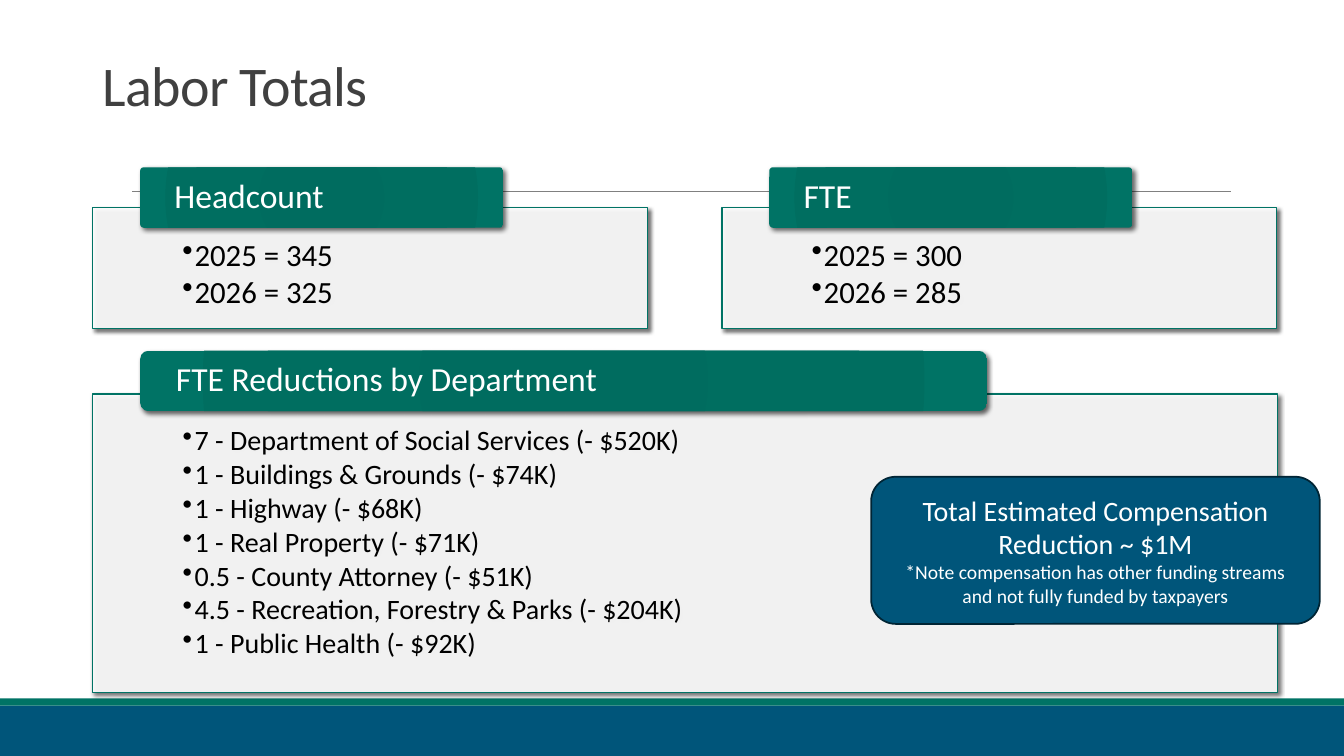
from lxml import etree
from pptx import Presentation
from pptx.dml.color import RGBColor
from pptx.enum.shapes import MSO_CONNECTOR, MSO_SHAPE
from pptx.enum.text import MSO_ANCHOR, MSO_AUTO_SIZE, PP_ALIGN
from pptx.oxml import parse_xml
from pptx.oxml.ns import qn
from pptx.util import Inches, Pt

RECTANGLE = MSO_SHAPE.RECTANGLE
ROUNDED = MSO_SHAPE.ROUNDED_RECTANGLE
MIDDLE = MSO_ANCHOR.MIDDLE
TOP = MSO_ANCHOR.TOP
LEFT = PP_ALIGN.LEFT
CENTER = PP_ALIGN.CENTER

NAVY, GREEN, WHITE = "00557A", "007365", "FFFFFF"
NAMESPACE = 'xmlns:a="http://schemas.openxmlformats.org/drawingml/2006/main"'
GRADIENT_STOPS = [(0, "006B5E"), (34, "006C5F"), (70, "006E60"), (100, GREEN)]
PANEL_LEFT, TAB_OFFSET = 0.92, 0.47

# left, panel top, panel width, panel height, tab top, tab width, heading, size, items
SECTIONS = [
    (PANEL_LEFT, 2.06, 5.5, 1.2, 1.66, 3.6, "Headcount", 22,
     ["2025 = 345", "2026 = 325"]),
    (7.16, 2.06, 5.5, 1.2, 1.66, 3.6, "FTE", 22,
     ["2025 = 300", "2026 = 285"]),
    (PANEL_LEFT, 3.91, 11.75, 2.96, 3.48, 8.4, "FTE Reductions by Department", 20,
     ["7 - Department of Social Services (- $520K)",
      "1 - Buildings & Grounds (- $74K)",
      "1 - Highway (- $68K)",
      "1 - Real Property (- $71K)",
      "0.5 - County Attorney (- $51K)",
      "4.5 - Recreation, Forestry & Parks (- $204K)",
      "1 - Public Health (- $92K)"]),
]


def color(hex_string):
    return RGBColor.from_string(hex_string)


def add_box(kind, left, top, width, height, fill, line=None, line_width=1, shadow_blur=0):
    """Add a filled shape with optional outline and a soft shadow, blur in points."""
    shape = slide.shapes.add_shape(
        kind, Inches(left), Inches(top), Inches(width), Inches(height))
    shape.shadow.inherit = False
    shape.fill.solid()
    shape.fill.fore_color.rgb = color(fill)
    if line:
        shape.line.color.rgb = color(line)
        shape.line.width = Pt(line_width)
    else:
        shape.line.fill.background()
    if shadow_blur:
        effects = shape.element.spPr.find(qn("a:effectLst"))
        effects.append(parse_xml(
            f'<a:outerShdw {NAMESPACE} blurRad="{Pt(shadow_blur)}" dist="{Pt(2)}" '
            'dir="2700000" algn="tl" rotWithShape="0"><a:srgbClr val="000000">'
            '<a:alpha val="60000"/></a:srgbClr></a:outerShdw>'))
    return shape


presentation = Presentation()
presentation.slide_width = Inches(13.33)
presentation.slide_height = Inches(7.5)
slide = presentation.slides.add_slide(presentation.slide_layouts[5])

# Footer bands and rule
add_box(RECTANGLE, 0, 7, 13.33, 0.5, NAVY)
add_box(RECTANGLE, 0, 6.93, 13.33, 0.07, GREEN)
rule = slide.shapes.add_connector(
    MSO_CONNECTOR.STRAIGHT, Inches(1.31), Inches(1.9), Inches(12.21), Inches(1.9))
rule.line.color.rgb = color("808080")
rule.line.width = Pt(0.5)
etree.SubElement(rule.element.spPr, qn("a:effectLst"))

# Title
title = slide.shapes.title
title.left, title.top = Inches(PANEL_LEFT), Inches(0.51)
title.width, title.height = Inches(11.5), Inches(0.75)
title.text_frame.text = "Labor Totals"
title.text_frame.auto_size = MSO_AUTO_SIZE.NONE
title.text_frame.vertical_anchor = MIDDLE
paragraph = title.text_frame.paragraphs[0]
paragraph.alignment = LEFT
paragraph.line_spacing = 0.85
run = paragraph.runs[0]
run.font.name = "Calibri"
run.font.size = Pt(40)
run.font.color.rgb = color("404040")
run.font._element.set("spc", "-50")

# Panels with heading tabs
for left, top, width, height, tab_top, tab_width, heading, size, items in SECTIONS:
    panel = add_box(RECTANGLE, left, top, width, height, WHITE, GREEN, shadow_blur=3)
    panel_color = panel.element.spPr.find(qn("a:solidFill"))[0]
    etree.SubElement(panel_color, qn("a:alpha")).set("val", "90000")
    frame = panel.text_frame
    frame.vertical_anchor = TOP
    frame.margin_left = frame.margin_right = Inches(0.89)
    frame.margin_top, frame.margin_bottom = Inches(0.32), Inches(0.11)
    frame.text = "\n".join(items)
    for paragraph in frame.paragraphs:
        properties = paragraph._p.get_or_add_pPr()
        properties.set("marL", str(Inches(0.12)))
        properties.set("indent", str(Inches(-0.12)))
        etree.SubElement(properties, qn("a:buChar")).set("char", "•")
        paragraph.level = 1
        paragraph.alignment = LEFT
        paragraph.line_spacing = 0.9
        paragraph.space_after = Pt(2.6)
        paragraph.font.name = "Calibri"
        paragraph.font.size = Pt(size)
        paragraph.font.color.rgb = color("000000")

    tab = add_box(ROUNDED, left + TAB_OFFSET, tab_top, tab_width, 0.6, GREEN,
                  shadow_blur=3.5)
    tab.adjustments[0] = tab_width / 60
    stops = "".join(f'<a:gs pos="{position * 1000}"><a:srgbClr val="{shade}"/></a:gs>'
                    for position, shade in GRADIENT_STOPS)
    tab_properties = tab.element.spPr
    tab_properties.replace(tab_properties.find(qn("a:solidFill")), parse_xml(
        f'<a:gradFill {NAMESPACE} rotWithShape="1"><a:gsLst>{stops}</a:gsLst>'
        '<a:path path="circle"><a:fillToRect l="100000" t="100000" r="100000" '
        'b="100000"/></a:path></a:gradFill>'))
    frame = tab.text_frame
    frame.vertical_anchor = MIDDLE
    frame.margin_left = frame.margin_right = Inches(0.33)
    frame.margin_top = frame.margin_bottom = Inches(0.02)
    frame.text = heading
    paragraph = frame.paragraphs[0]
    paragraph.alignment = LEFT
    paragraph.line_spacing = 0.9
    paragraph.font.name = "Calibri"
    paragraph.font.size = Pt(24)
    paragraph.font.color.rgb = color(WHITE)

# Compensation callout
callout = add_box(ROUNDED, 8.64, 4.73, 4.45, 1.46, NAVY, "002535", 1.25)
frame = callout.text_frame
frame.vertical_anchor = MIDDLE
frame.text = ("Total Estimated Compensation Reduction ~ $1M\n"
              "*Note compensation has other funding streams and not fully funded by taxpayers")
for paragraph, size in zip(frame.paragraphs, (20, 14)):
    paragraph.alignment = CENTER
    paragraph.font.name = "Calibri"
    paragraph.font.size = Pt(size)
    paragraph.font.color.rgb = color(WHITE)

presentation.save("out.pptx")
